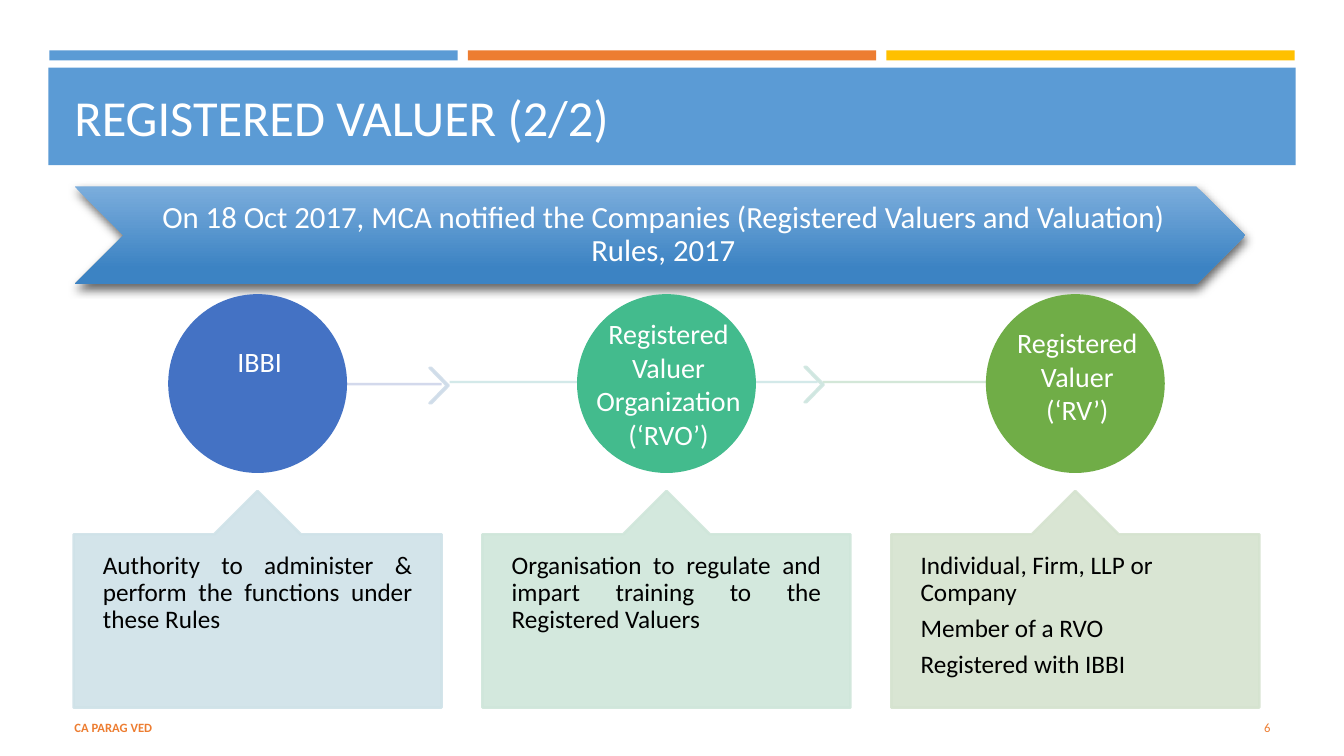
from lxml.etree import SubElement
from pptx import Presentation
from pptx.dml.color import RGBColor
from pptx.enum.shapes import MSO_CONNECTOR as Line, MSO_SHAPE as Shape
from pptx.enum.text import MSO_ANCHOR as Anchor, PP_ALIGN as Align
from pptx.oxml.ns import qn
from pptx.util import Inches, Pt

SLIDE_W, SLIDE_H = 13.33, 7.5
BAR_LEFT, BAR_PITCH, BAR_W = 0.49, 4.15, 4.05
STAGE_LEFT, STAGE_PITCH, STAGE_W = 0.73, 4.055, 3.65
CALLOUT_TOP, CALLOUT_H, TIP_SHARE = 4.87, 2.15, 0.2
CIRCLE_TOP, CIRCLE_D = 2.93, 1.75
RULE_W = 1.75

COLORS = {
    "blue": "5B9BD5", "orange": "ED7D31", "yellow": "FFC000",
    "white": "FFFFFF", "black": "000000",
    "banner top": "7BADDC", "banner bottom": "3C83C3",
    "authority": "4472C4", "authority pale": "CFE2E8",
    "organisation": "43BB8D", "organisation pale": "CFE6DA",
    "valuer": "70AD47", "valuer pale": "D5E3CF",
    "link 1": "CFD5EA", "head 1": "CFDCE9",
    "link 2": "CFE7E7", "head 2": "CFE6E0", "link 3": "CFE5D4",
}

# colour, label top, label lines, alignment, description
STAGES = [
    ("authority", 3.37, ["IBBI"], Align.JUSTIFY,
     ["Authority to administer & perform the functions under these Rules"]),
    ("organisation", 3.09, ["Registered Valuer Organization", "(‘RVO’)"], Align.JUSTIFY,
     ["Organisation to regulate and impart training to the Registered Valuers"]),
    ("valuer", 3.18, ["Registered Valuer", "(‘RV’)"], Align.LEFT,
     ["Individual, Firm, LLP or Company", "Member of a RVO", "Registered with IBBI"]),
]
# colour, start, end, height of the line
LINKS = [("link 1", 2.76, 4.38, 3.81), ("link 2", 4.46, 8.11, 3.79), ("link 3", 8.16, 9.98, 3.79)]
# colour, left, top
HEADS = [("head 1", 4.26, 3.65), ("head 2", 7.98, 3.64)]


def rgb(name):
    return RGBColor.from_string(COLORS[name])


def fade(fill_holder):
    """Make every solid colour under the element 90% opaque."""
    for color in fill_holder.iter(qn("a:srgbClr")):
        SubElement(color, qn("a:alpha"), val="90000")


def add_block(slide, kind, box, color, outlined=False, pale=False, adjustments=()):
    block = slide.shapes.add_shape(kind, *map(Inches, box))
    block.shadow.inherit = False
    for index, value in enumerate(adjustments):
        block.adjustments[index] = value
    block.fill.solid()
    block.fill.fore_color.rgb = rgb(color)
    if outlined:
        block.line.color.rgb = rgb(color)
        block.line.width = Pt(RULE_W)
    else:
        block.line.fill.background()
    if pale:
        fade(block._element.spPr)
    return block


def add_text(slide, box, lines, size, color, align=Align.LEFT, anchor=Anchor.TOP,
             insets=(0.1, 0.05, 0.1, 0.05), spacing=None, after=0, bold=False):
    frame = slide.shapes.add_textbox(*map(Inches, box)).text_frame
    frame.word_wrap = True
    frame.vertical_anchor = anchor
    (frame.margin_left, frame.margin_top,
     frame.margin_right, frame.margin_bottom) = map(Inches, insets)
    frame.text = "\n".join(lines)
    for paragraph in frame.paragraphs:
        paragraph.alignment = align
        paragraph.line_spacing = spacing
        paragraph.space_after = Pt(after)
        font = paragraph.font
        font.name, font.size, font.bold = "Calibri", Pt(size), bold
        font.color.rgb = rgb(color)


def add_link(slide, color, start, end, y):
    link = slide.shapes.add_connector(Line.STRAIGHT, *map(Inches, (start, y, end, y)))
    link.line.color.rgb = rgb(color)
    link.line.width = Pt(RULE_W)
    fade(link._element.spPr)
    SubElement(link._element.spPr, qn("a:effectLst"))


def add_header(slide):
    for column, color in enumerate(["blue", "orange", "yellow"]):
        add_block(slide, Shape.RECTANGLE, (BAR_LEFT + column * BAR_PITCH, 0.5, BAR_W, 0.1), color)
    add_block(slide, Shape.RECTANGLE, (0.48, 0.67, 12.37, 0.97), "blue")
    add_text(slide, (0.64, 0.74, 12.06, 0.83), ["REGISTERED VALUER (2/2)"], 36, "white",
             anchor=Anchor.MIDDLE)


def add_banner(slide):
    banner = add_block(slide, Shape.CHEVRON, (0.74, 1.85, 11.61, 0.97), "blue")
    banner.fill.gradient()
    banner.fill.gradient_angle = 270
    stops = [(0, "banner top"), (0.84, "banner bottom")]
    for stop, (position, color) in zip(banner.fill.gradient_stops, stops):
        stop.position = position
        stop.color.rgb = rgb(color)
    effects = banner._element.spPr.find(qn("a:effectLst"))
    shadow = SubElement(effects, qn("a:outerShdw"), blurRad=str(Pt(7)), dist=str(Pt(3)),
                        dir=str(84 * 60000), rotWithShape="0")
    shade = SubElement(shadow, qn("a:srgbClr"), val=COLORS["black"])
    SubElement(shade, qn("a:alpha"), val="60000")
    add_text(slide, (1.22, 1.85, 10.65, 0.97),
             ["On 18 Oct 2017, MCA notified the Companies (Registered Valuers and Valuation) "
              "Rules, 2017"], 22, "white", Align.CENTER, Anchor.MIDDLE,
             (0.1, 0.03, 0.03, 0.03), 0.9)


def add_stage(slide, column, color, label_top, label, align, description):
    left = STAGE_LEFT + column * STAGE_PITCH
    circle_left = left + (STAGE_W - CIRCLE_D) / 2
    add_block(slide, Shape.OVAL, (circle_left, CIRCLE_TOP, CIRCLE_D, CIRCLE_D), color,
              outlined=True)
    add_text(slide, (circle_left + 0.02, label_top, CIRCLE_D, 1.45), label, 20, "white",
             Align.CENTER)
    add_block(slide, Shape.UP_ARROW_CALLOUT, (left, CALLOUT_TOP, STAGE_W, CALLOUT_H),
              f"{color} pale", outlined=True, pale=True,
              adjustments=(0.5, TIP_SHARE, TIP_SHARE, 1))
    tip = CALLOUT_H * TIP_SHARE
    add_text(slide, (left, CALLOUT_TOP + tip, STAGE_W, CALLOUT_H - tip), description, 18,
             "black", align, insets=(0.29, 0.18, 0.29, 0.18), spacing=0.9, after=6.3)


def add_footer(slide):
    add_text(slide, (0.64, 7.02, 7.56, 0.4), ["CA PARAG VED"], 9, "orange",
             anchor=Anchor.MIDDLE, bold=True)
    add_text(slide, (11.55, 7.02, 1.15, 0.4), ["6"], 9, "orange", Align.RIGHT, Anchor.MIDDLE)


def main():
    deck = Presentation()
    deck.slide_width, deck.slide_height = Inches(SLIDE_W), Inches(SLIDE_H)
    slide = deck.slides.add_slide(deck.slide_layouts[6])
    add_header(slide)
    add_banner(slide)
    for link in LINKS:
        add_link(slide, *link)
    for color, left, top in HEADS:
        add_block(slide, Shape.CHEVRON, (left, top, 0.19, 0.35), color,
                  outlined=True, pale=True, adjustments=(0.9,))
    for column, stage in enumerate(STAGES):
        add_stage(slide, column, *stage)
    add_footer(slide)
    deck.save("out.pptx")


if __name__ == "__main__":
    main()
